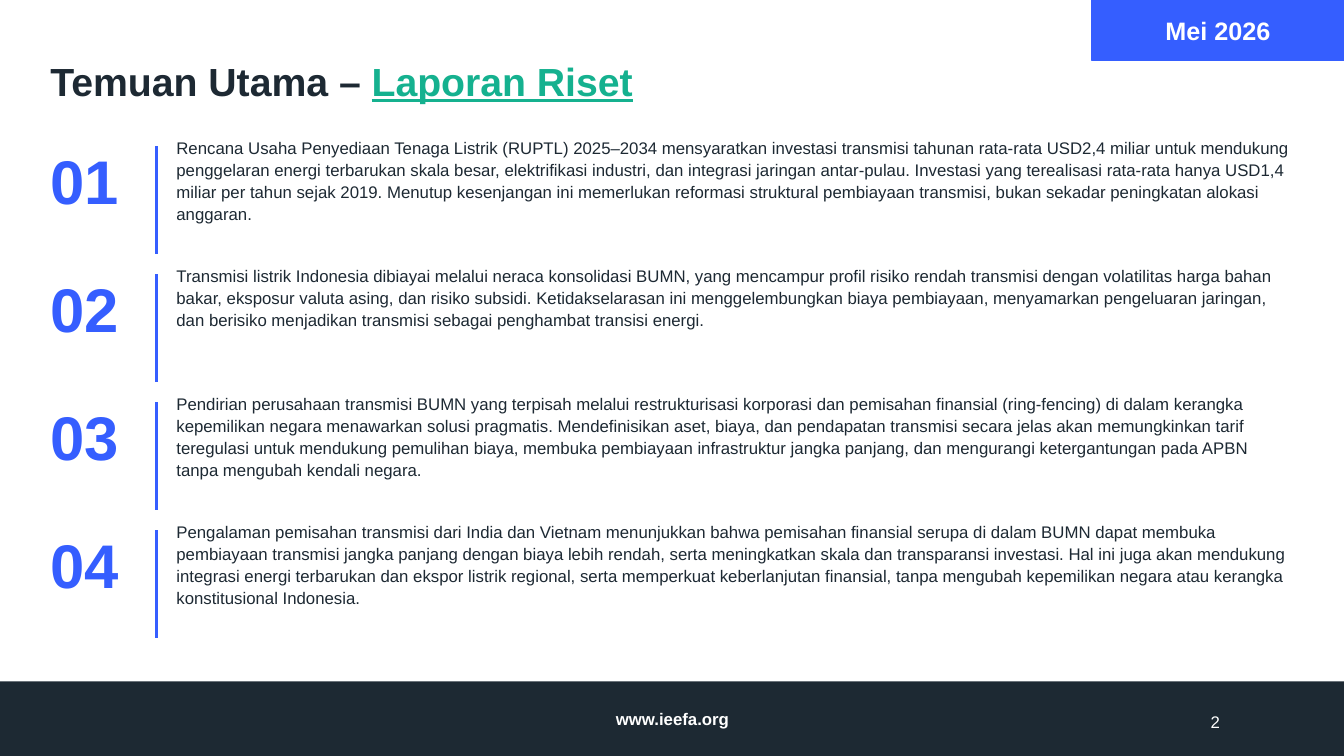
from pptx import Presentation
from pptx.dml.color import RGBColor
from pptx.enum.shapes import MSO_CONNECTOR as CONNECTOR, MSO_SHAPE as SHAPE
from pptx.enum.text import MSO_ANCHOR as ANCHOR, PP_ALIGN as ALIGN
from pptx.oxml.ns import qn
from pptx.util import Inches, Pt
from lxml import etree

BLUE, DARK, GREEN, WHITE = "355EFF", "1D2933", "15B18F", "FFFFFF"


def color(value):
    return RGBColor.from_string(value)


def write(shape, runs, size, bold=False, align=ALIGN.LEFT, anchor=ANCHOR.TOP, spacing=None):
    frame = shape.text_frame
    frame.word_wrap = True
    frame.vertical_anchor = anchor
    frame.margin_left = frame.margin_right = frame.margin_top = frame.margin_bottom = 0
    paragraph = frame.paragraphs[0]
    paragraph.alignment = align
    if spacing:
        paragraph.line_spacing = spacing
    for text, run_color in runs:
        run = paragraph.add_run()
        run.text = text
        run.font.name = "Arial"
        run.font.size = Pt(size)
        run.font.bold = bold
        run.font.color.rgb = color(run_color)
    return paragraph


presentation = Presentation()
presentation.slide_width = Inches(13.33)
presentation.slide_height = Inches(7.5)
slide = presentation.slides.add_slide(presentation.slide_layouts[6])
shapes = slide.shapes

footer = shapes.add_shape(SHAPE.RECTANGLE, Inches(0), Inches(6.76), Inches(13.33), Inches(0.74))
date_tag = shapes.add_shape(SHAPE.RECTANGLE, Inches(10.83), Inches(0), Inches(2.5), Inches(0.6))
for block, fill in ((footer, DARK), (date_tag, BLUE)):
    block.shadow.inherit = False
    block.fill.solid()
    block.fill.fore_color.rgb = color(fill)
    block.line.color.rgb = color(fill)
    block.line.width = Pt(1)
footer.line.fill.background()
write(date_tag, [("Mei 2026", WHITE)], 18, True, ALIGN.CENTER, ANCHOR.MIDDLE)

website = shapes.add_textbox(Inches(4.72), Inches(7.01), Inches(3.9), Inches(0.24))
write(website, [("www.ieefa.org", WHITE)], 12, True, ALIGN.CENTER, ANCHOR.MIDDLE)
page_number = shapes.add_textbox(Inches(11.56), Inches(7.01), Inches(0.54), Inches(0.31))
write(page_number, [("2", WHITE)], 12, False, ALIGN.RIGHT, ANCHOR.MIDDLE)

title = shapes.add_textbox(Inches(0.5), Inches(0.45), Inches(12.3), Inches(0.7))
heading = write(title, [("Temuan Utama – ", DARK), ("Laporan Riset", GREEN)], 28, True, anchor=ANCHOR.MIDDLE)
heading.runs[1].font.underline = True

findings = [
    "Rencana Usaha Penyediaan Tenaga Listrik (RUPTL) 2025–2034 mensyaratkan investasi transmisi tahunan "
    "rata-rata USD2,4 miliar untuk mendukung penggelaran energi terbarukan skala besar, elektrifikasi industri, "
    "dan integrasi jaringan antar-pulau. Investasi yang terealisasi rata-rata hanya USD1,4 miliar per tahun "
    "sejak 2019. Menutup kesenjangan ini memerlukan reformasi struktural pembiayaan transmisi, bukan sekadar "
    "peningkatan alokasi anggaran.",
    "Transmisi listrik Indonesia dibiayai melalui neraca konsolidasi BUMN, yang mencampur profil risiko rendah "
    "transmisi dengan volatilitas harga bahan bakar, eksposur valuta asing, dan risiko subsidi. "
    "Ketidakselarasan ini menggelembungkan biaya pembiayaan, menyamarkan pengeluaran jaringan, dan berisiko "
    "menjadikan transmisi sebagai penghambat transisi energi.",
    "Pendirian perusahaan transmisi BUMN yang terpisah melalui restrukturisasi korporasi dan pemisahan finansial "
    "(ring-fencing) di dalam kerangka kepemilikan negara menawarkan solusi pragmatis. Mendefinisikan aset, "
    "biaya, dan pendapatan transmisi secara jelas akan memungkinkan tarif teregulasi untuk mendukung pemulihan "
    "biaya, membuka pembiayaan infrastruktur jangka panjang, dan mengurangi ketergantungan pada APBN tanpa "
    "mengubah kendali negara.",
    "Pengalaman pemisahan transmisi dari India dan Vietnam menunjukkan bahwa pemisahan finansial serupa di dalam "
    "BUMN dapat membuka pembiayaan transmisi jangka panjang dengan biaya lebih rendah, serta meningkatkan skala "
    "dan transparansi investasi. Hal ini juga akan mendukung integrasi energi terbarukan dan ekspor listrik "
    "regional, serta memperkuat keberlanjutan finansial, tanpa mengubah kepemilikan negara atau kerangka "
    "konstitusional Indonesia.",
]
row_height = 1.27
for index, finding in enumerate(findings):
    top = 1.35 + index * row_height
    number = shapes.add_textbox(Inches(0.5), Inches(top), Inches(1.1), Inches(row_height))
    write(number, [(f"{index + 1:02}", BLUE)], 44, True, spacing=1.09)
    divider = shapes.add_connector(
        CONNECTOR.STRAIGHT, Inches(1.55), Inches(top + 0.1), Inches(1.55), Inches(top + 1.17))
    divider.line.color.rgb = color(BLUE)
    divider.line.width = Pt(2)
    etree.SubElement(divider._element.spPr, qn("a:effectLst"))
    body = shapes.add_textbox(Inches(1.75), Inches(top), Inches(11.1), Inches(1.22))
    write(body, [(finding, DARK)], 12, spacing=1.09)

presentation.save("out.pptx")
